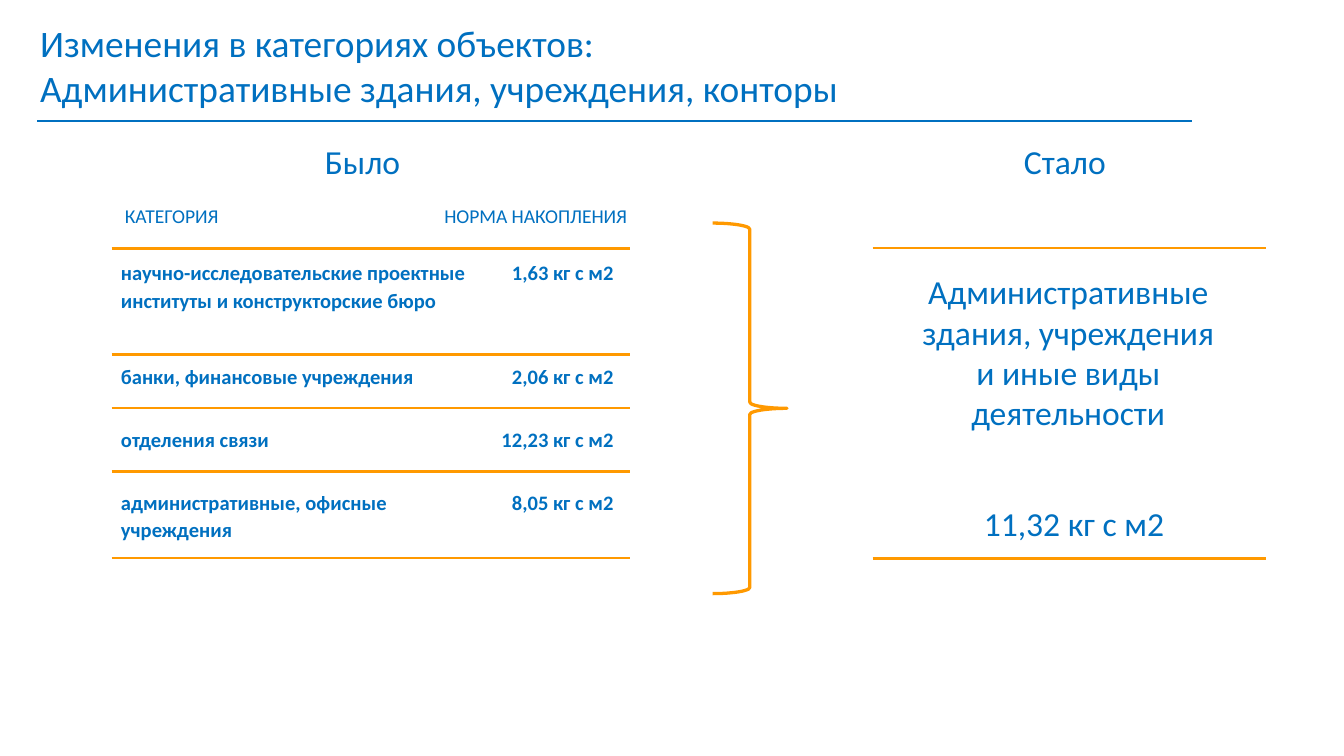
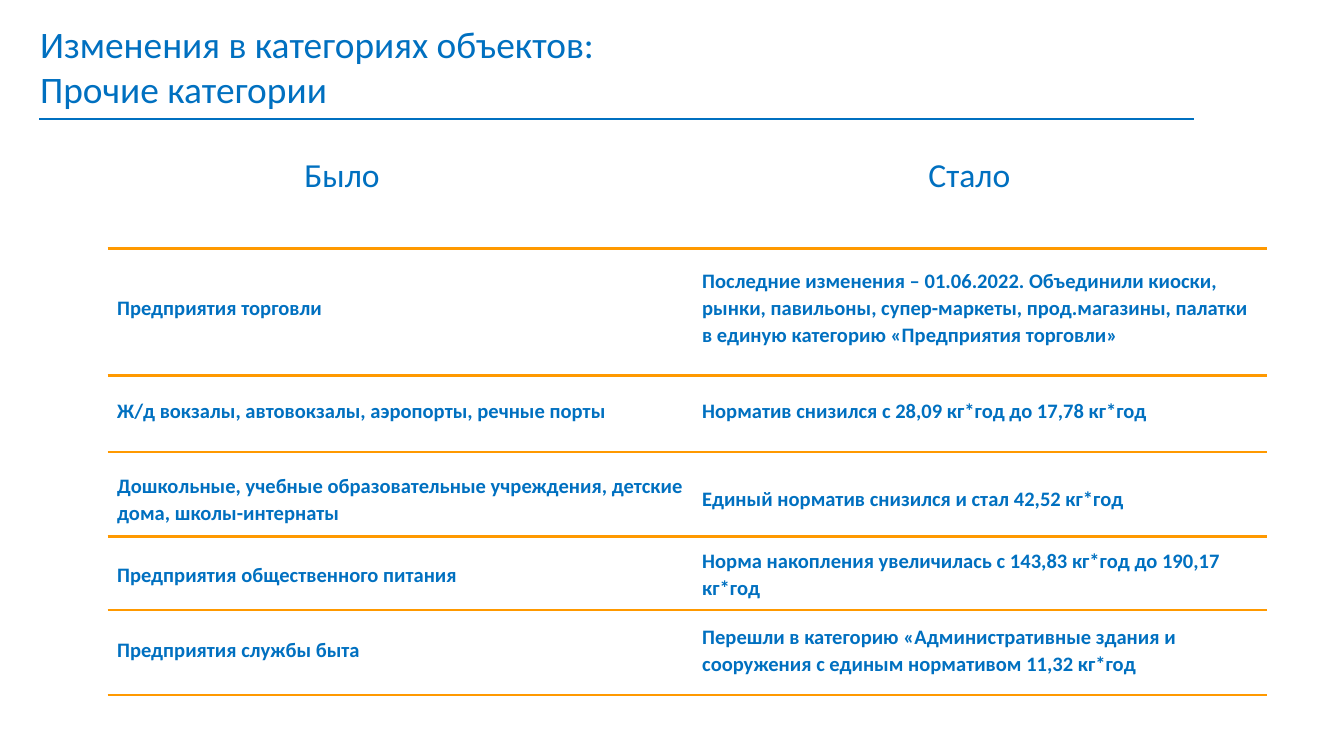
"""Build two slides on changes in waste accumulation categories."""
from lxml.etree import SubElement
from pptx import Presentation
from pptx.dml.color import RGBColor
from pptx.enum.shapes import MSO_CONNECTOR, MSO_SHAPE
from pptx.enum.text import MSO_ANCHOR, MSO_AUTO_SIZE, PP_ALIGN
from pptx.oxml.ns import qn
from pptx.util import Pt

BLUE = RGBColor(0x00, 0x70, 0xC0)
ORANGE = RGBColor(0xFF, 0x99, 0x00)
FONT = "Calibri"
TITLE_START = "Изменения в категориях объектов:"


def write_text(frame, lines, size, bold=False, align=PP_ALIGN.LEFT):
    frame.word_wrap = True
    for index, line in enumerate(lines):
        para = frame.paragraphs[0] if index == 0 else frame.add_paragraph()
        para.text = line
        para.alignment = align
        para.font.name = FONT
        para.font.size = Pt(size)
        para.font.bold = bold
        para.font.color.rgb = BLUE


def add_rule(page, left, right, top, color=ORANGE):
    rule = page.shapes.add_connector(
        MSO_CONNECTOR.STRAIGHT, Pt(left), Pt(top), Pt(right), Pt(top))
    rule.line.color.rgb = color
    rule.line.width = Pt(1.25)
    SubElement(rule._element.spPr, qn("a:effectLst"))


OFFICES = {
    "title": "Административные здания, учреждения, конторы",
    "title_top": 7.2,
    "title_rule": (20, 638.5, 64.8),
    "labels": [
        ("Было", 167, 72, 62.6, 28.8, 18, PP_ALIGN.LEFT),
        ("Стало", 541.5, 72, 62.6, 28.8, 18, PP_ALIGN.LEFT),
        ("КАТЕГОРИЯ", 59.8, 105.8, 75, 20.5, 10.5, PP_ALIGN.LEFT),
        ("НОРМА НАКОПЛЕНИЯ", 231, 105.8, 117.4, 20.5, 10.5, PP_ALIGN.LEFT),
        ("Административные здания, учреждения и иные виды деятельности",
         484.5, 141.8, 175.7, 94.3, 18, PP_ALIGN.CENTER),
        ("11,32 кг с м2", 520, 265.7, 128.2, 28.8, 18, PP_ALIGN.LEFT),
    ],
    "table_corner": (59.8, 139),
    "columns": [203.8, 74.2],
    "heights": [55.4, 33.8, 33.8, 36.7],
    "rows": [
        ("научно-исследовательские проектные институты и конструкторские бюро",
         "1,63 кг с м2"),
        ("банки, финансовые учреждения", "2,06 кг с м2"),
        ("отделения связи", "12,23 кг с м2"),
        ("административные, офисные учреждения", "8,05 кг с м2"),
    ],
    "anchor": MSO_ANCHOR.TOP,
    "space_after": 8,
    "value_align": PP_ALIGN.RIGHT,
    "value_margins": (2, 9),
    "rules": [(59.8, 337.7, [133.2, 190, 218.5, 252.6, 298.8]),
              (467.5, 678.5, [132.8, 299.2])],
}

OTHERS = {
    "title": "Прочие категории",
    "title_top": 8,
    "title_rule": (21, 639.4, 63.6),
    "labels": [
        ("Было", 156, 79.2, 62.6, 28.8, 18, PP_ALIGN.LEFT),
        ("Стало", 490.3, 79.2, 62.6, 28.8, 18, PP_ALIGN.LEFT),
    ],
    "table_corner": (57.8, 134),
    "columns": [313.4, 307.6],
    "heights": [61.9, 47.6, 47.6, 33.2, 47.6],
    "rows": [
        ("Предприятия торговли",
         "Последние изменения – 01.06.2022. Объединили киоски, рынки, "
         "павильоны, супер-маркеты, прод.магазины, палатки в единую "
         "категорию «Предприятия торговли»"),
        ("Ж/д вокзалы, автовокзалы, аэропорты, речные порты",
         "Норматив снизился с 28,09 кг*год до 17,78 кг*год"),
        ("Дошкольные, учебные образовательные учреждения, детские дома, "
         "школы-интернаты",
         "Единый норматив снизился и стал 42,52 кг*год"),
        ("Предприятия общественного питания",
         "Норма накопления увеличилась с 143,83 кг*год до 190,17 кг*год"),
        ("Предприятия службы быта",
         "Перешли в категорию «Административные здания и сооружения "
         "с единым нормативом 11,32 кг*год"),
    ],
    "anchor": MSO_ANCHOR.MIDDLE,
    "space_after": 0,
    "value_align": PP_ALIGN.LEFT,
    "value_margins": (5, 5),
    "rules": [(57.6, 678.6, [133.2, 201.2, 242, 287.5, 327, 372.4])],
}

deck = Presentation()
deck.slide_width, deck.slide_height = Pt(720), Pt(405)

for content in (OFFICES, OTHERS):
    page = deck.slides.add_slide(deck.slide_layouts[6])

    box = page.shapes.add_textbox(
        Pt(14.4), Pt(content["title_top"]), Pt(620), Pt(55.7))
    write_text(box.text_frame, [TITLE_START, content["title"]], 20)
    box.text_frame.auto_size = MSO_AUTO_SIZE.SHAPE_TO_FIT_TEXT
    add_rule(page, *content["title_rule"], BLUE)

    for label, left, top, width, height, size, align in content["labels"]:
        box = page.shapes.add_textbox(Pt(left), Pt(top), Pt(width), Pt(height))
        write_text(box.text_frame, [label], size, align=align)
        box.text_frame.auto_size = MSO_AUTO_SIZE.SHAPE_TO_FIT_TEXT

    left, top = content["table_corner"]
    columns, heights = content["columns"], content["heights"]
    table = page.shapes.add_table(
        len(heights), len(columns), Pt(left), Pt(top),
        Pt(sum(columns)), Pt(sum(heights))).table
    table.horz_banding = False
    for column, width in zip(table.columns, columns):
        column.width = Pt(width)
    for row, height, texts in zip(table.rows, heights, content["rows"]):
        row.height = Pt(height)
        styles = [(PP_ALIGN.LEFT, (5, 5)),
                  (content["value_align"], content["value_margins"])]
        for cell, text, (align, margins) in zip(row.cells, texts, styles):
            cell.fill.background()
            cell.vertical_anchor = content["anchor"]
            cell.margin_left, cell.margin_right = map(Pt, margins)
            cell.margin_top = cell.margin_bottom = Pt(0)
            write_text(cell.text_frame, [text], 11, True, align)
            para = cell.text_frame.paragraphs[0]
            para.line_spacing = 1.07
            para.space_after = Pt(content["space_after"])

    for left, right, tops in content["rules"]:
        for top in tops:
            add_rule(page, left, right, top)

brace = deck.slides[0].shapes.add_shape(
    MSO_SHAPE.RIGHT_BRACE, Pt(381.8), Pt(119.5), Pt(39.8), Pt(198.5))
brace.shadow.inherit = False
brace.fill.background()
brace.line.color.rgb = ORANGE
brace.line.width = Pt(1.75)

deck.save("out.pptx")
